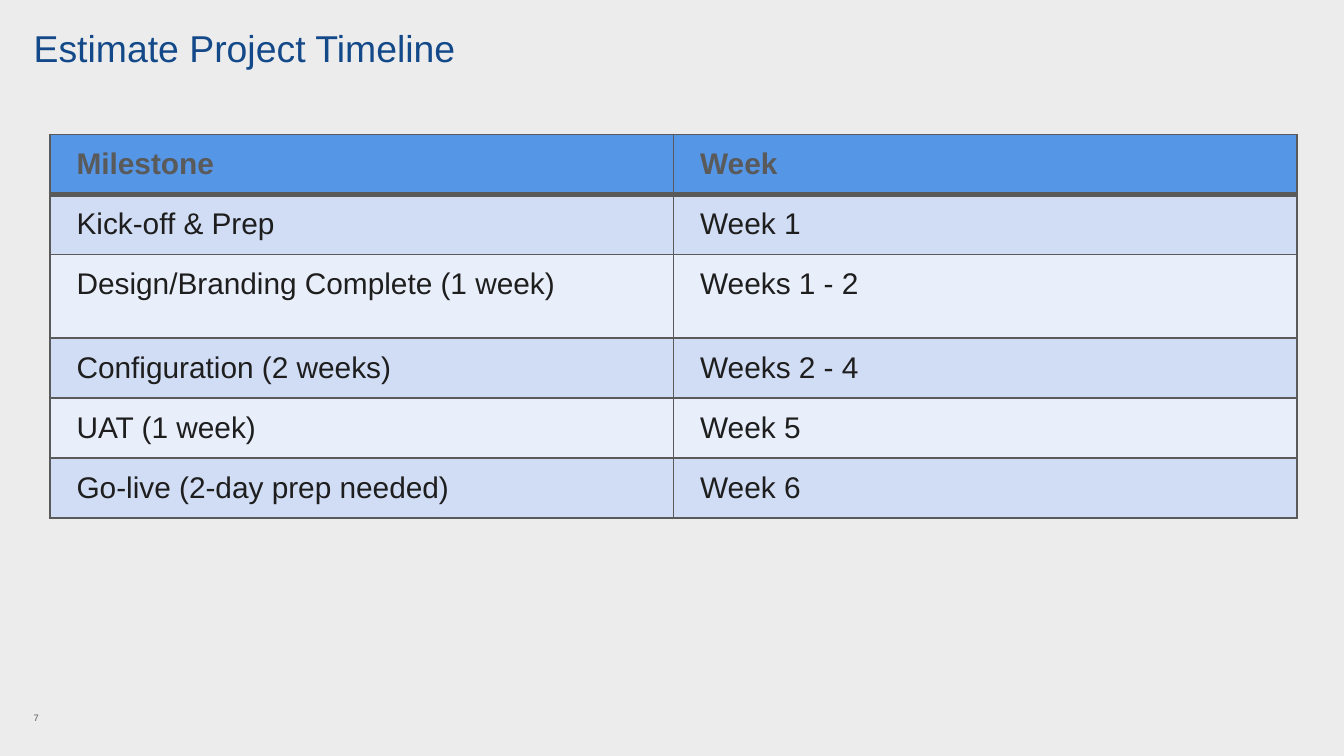
from dataclasses import dataclass

from lxml.etree import SubElement
from pptx import Presentation
from pptx.dml.color import RGBColor
from pptx.enum.text import MSO_ANCHOR, PP_ALIGN
from pptx.oxml.ns import qn
from pptx.util import Inches, Pt

SLIDE_WIDTH = 10
SLIDE_HEIGHT = SLIDE_WIDTH * 9 / 16


@dataclass(frozen=True)
class Theme:
    font: str = "Arial"
    background: str = "ECECEC"
    title: str = "144989"
    grey: str = "5A5A5A"
    body: str = "1E1E1E"
    header_fill: str = "5596E6"
    bands: tuple = ("D1DDF5", "E9EFFA")
    title_size: int = 20
    table_size: int = 16
    number_size: int = 5
    border: int = 1
    header_border: int = 3


@dataclass(frozen=True)
class Milestone:
    name: str
    week: str
    height: float = 0.44


THEME = Theme()
HEADER = Milestone("Milestone", "Week")
MILESTONES = [
    Milestone("Kick-off & Prep", "Week 1"),
    Milestone("Design/Branding Complete (1 week)", "Weeks 1 - 2", 0.62),
    Milestone("Configuration (2 weeks)", "Weeks 2 - 4"),
    Milestone("UAT (1 week)", "Week 5"),
    Milestone("Go-live (2-day prep needed)", "Week 6"),
]


def write(tf, text: str, size: int, color: str, bold: bool = False) -> None:
    """Put one formatted line into a text frame."""
    tf.text = text
    p = tf.paragraphs[0]
    p.alignment = PP_ALIGN.LEFT
    font = p.runs[0].font
    font.name, font.size, font.bold = THEME.font, Pt(size), bold
    font.color.rgb = RGBColor.from_string(color)


def place(sp, left: float, top: float, width: float, height: float,
          anchor: MSO_ANCHOR) -> None:
    """Position a text shape and clear its margins."""
    sp.left, sp.top = Inches(left), Inches(top)
    sp.width, sp.height = Inches(width), Inches(height)
    tf = sp.text_frame
    tf.word_wrap = True
    tf.vertical_anchor = anchor
    tf.margin_left = tf.margin_right = tf.margin_top = tf.margin_bottom = 0


def add_borders(cell, top: int, bottom: int) -> None:
    """Draw the four cell borders, with widths in points."""
    tc_pr = cell._tc.get_or_add_tcPr()
    widths = {"a:lnL": THEME.border, "a:lnR": THEME.border,
              "a:lnT": top, "a:lnB": bottom}
    for i, (tag, width) in enumerate(widths.items()):
        ln = SubElement(tc_pr, qn(tag), w=str(Pt(width)))
        fill = SubElement(ln, qn("a:solidFill"))
        SubElement(fill, qn("a:srgbClr"), val=THEME.grey)
        tc_pr.insert(i, ln)


def add_timeline(s, rows: list[Milestone]) -> None:
    """Add the milestone table; the first row is the header."""
    height = sum(row.height for row in rows)
    table = s.shapes.add_table(len(rows), 2, Inches(0.37), Inches(1),
                               Inches(9.28), Inches(height)).table
    for i, row in enumerate(rows):
        table.rows[i].height = Inches(row.height)
        header = i == 0
        fill = THEME.header_fill if header else THEME.bands[(i - 1) % 2]
        for j, text in enumerate((row.name, row.week)):
            cell = table.cell(i, j)
            cell.margin_left = cell.margin_right = Inches(0.2)
            cell.margin_top = cell.margin_bottom = Inches(0.1)
            cell.fill.solid()
            cell.fill.fore_color.rgb = RGBColor.from_string(fill)
            write(cell.text_frame, text, THEME.table_size,
                  THEME.grey if header else THEME.body, header)
            add_borders(cell,
                        THEME.header_border if i == 1 else THEME.border,
                        THEME.header_border if header else THEME.border)


def main() -> None:
    prs = Presentation()
    prs.slide_width, prs.slide_height = Inches(SLIDE_WIDTH), Inches(SLIDE_HEIGHT)
    s = prs.slides.add_slide(prs.slide_layouts[5])
    s.background.fill.solid()
    s.background.fill.fore_color.rgb = RGBColor.from_string(THEME.background)

    # Title
    title = s.shapes.title
    place(title, 0.25, 0.19, 4.89, 0.51, MSO_ANCHOR.TOP)
    write(title.text_frame, "Estimate Project Timeline",
          THEME.title_size, THEME.title)

    # Timeline table
    add_timeline(s, [HEADER, *MILESTONES])

    # Slide number
    number = s.shapes.add_textbox(0, 0, 0, 0)
    place(number, 0.25, 5.16, 0.23, 0.22, MSO_ANCHOR.BOTTOM)
    write(number.text_frame, "7", THEME.number_size, THEME.grey)

    prs.save("out.pptx")


if __name__ == "__main__":
    main()
